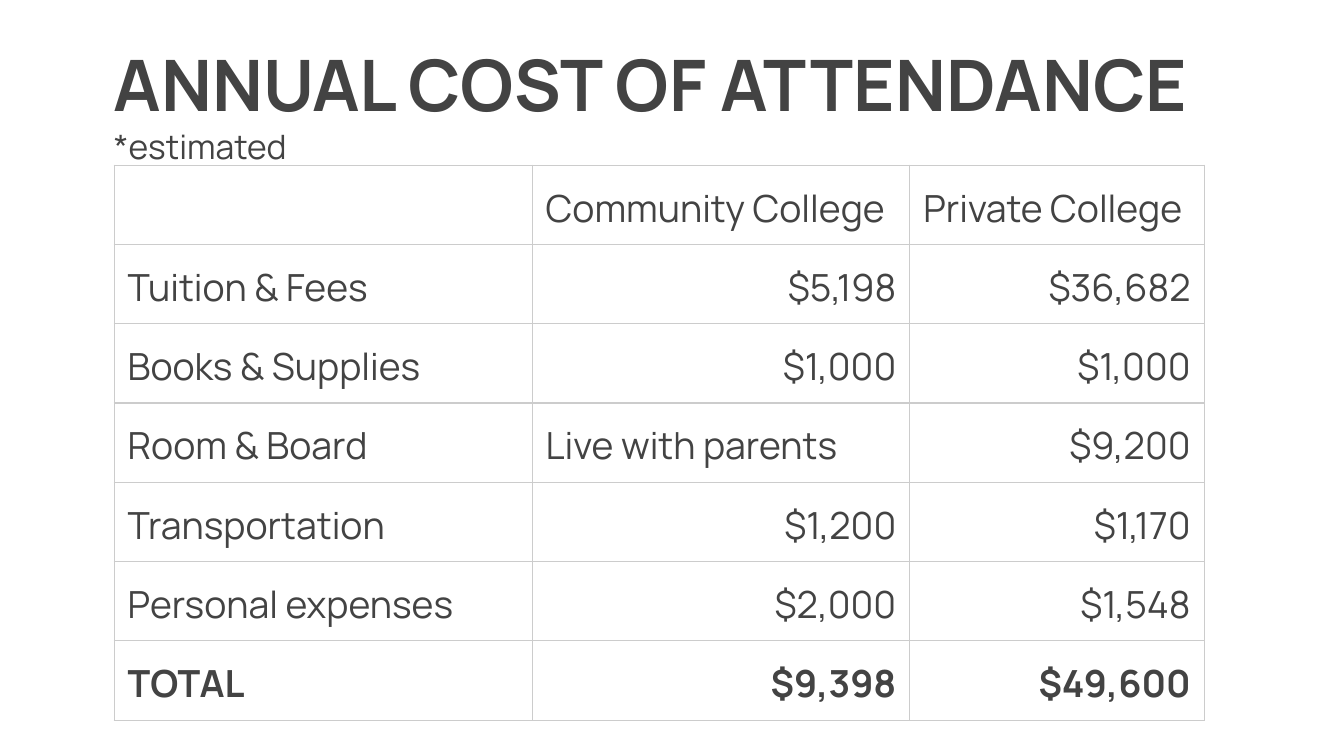
from lxml import etree
from pptx import Presentation
from pptx.dml.color import RGBColor
from pptx.enum.text import MSO_ANCHOR, PP_ALIGN
from pptx.oxml.ns import qn
from pptx.util import Inches, Pt

MIDDLE = MSO_ANCHOR.MIDDLE
LEFT, RIGHT = PP_ALIGN.LEFT, PP_ALIGN.RIGHT
FONT = "Manrope"
COLORS = {"text": "434343", "border": "CCCCCC"}
COL_WIDTHS = [3.11, 2.81, 2.19]
ROW_HEIGHT = 0.59
COSTS = [
    ["", "Community College", "Private College"],
    ["Tuition & Fees", "$5,198", "$36,682"],
    ["Books & Supplies", "$1,000", "$1,000"],
    ["Room & Board", "Live with parents", "$9,200"],
    ["Transportation", "$1,200", "$1,170"],
    ["Personal expenses", "$2,000", "$1,548"],
    ["TOTAL", "$9,398", "$49,600"],
]


def write(p, text, size, bold=False, spacing=1.0, align=LEFT):
    """Fill a paragraph with one formatted run."""
    p.text = text
    p.line_spacing = spacing
    p.alignment = align
    for r in p.runs:
        r.font.name = FONT
        r.font.size = Pt(size)
        r.font.bold = bold
        r.font.color.rgb = RGBColor.from_string(COLORS["text"])


def add_borders(cell):
    """Draw a thin line on all four sides of a cell."""
    tc_pr = cell._tc.get_or_add_tcPr()
    for i, side in enumerate(("a:lnL", "a:lnR", "a:lnT", "a:lnB")):
        ln = etree.Element(qn(side), w=str(Pt(0.75)))
        fill = etree.SubElement(ln, qn("a:solidFill"))
        etree.SubElement(fill, qn("a:srgbClr"), val=COLORS["border"])
        tc_pr.insert(i, ln)


def add_title(s, x, y, w, h):
    """Place the heading and its note."""
    tf = s.shapes.add_textbox(Inches(x), Inches(y), Inches(w), Inches(h)).text_frame
    tf.word_wrap = True
    tf.vertical_anchor = MIDDLE
    tf.margin_left = tf.margin_right = Inches(0.1)
    tf.margin_top = tf.margin_bottom = Inches(0.1)
    write(tf.paragraphs[0], "ANNUAL COST OF ATTENDANCE", 38, bold=True, spacing=1.15)
    write(tf.add_paragraph(), "*estimated", 18)


def add_cost_table(s, x, y):
    """Place the cost table, with amounts to the right and a bold total."""
    rows, cols = len(COSTS), len(COL_WIDTHS)
    table = s.shapes.add_table(rows, cols, Inches(x), Inches(y),
                               Inches(sum(COL_WIDTHS)), Inches(ROW_HEIGHT * rows)).table
    table.first_row = table.horz_banding = False
    for col, width in zip(table.columns, COL_WIDTHS):
        col.width = Inches(width)
    for row, texts in zip(table.rows, COSTS):
        row.height = Inches(ROW_HEIGHT)
        for cell, text in zip(row.cells, texts):
            cell.fill.background()
            add_borders(cell)
            cell.margin_left = cell.margin_right = Inches(0.1)
            cell.margin_top = cell.margin_bottom = Inches(0.07)
            write(cell.text_frame.paragraphs[0], text, 20, bold=texts[0] == "TOTAL",
                  spacing=1.15, align=RIGHT if text.startswith("$") else LEFT)


def main():
    """Build and save the slide."""
    prs = Presentation()
    prs.slide_width = Inches(10)
    prs.slide_height = prs.slide_width * 9 // 16
    s = prs.slides.add_slide(prs.slide_layouts[6])
    add_title(s, 0.75, 0.25, 8.5, 0.94)
    add_cost_table(s, 0.85, 1.23)
    prs.save("out.pptx")


if __name__ == "__main__":
    main()
